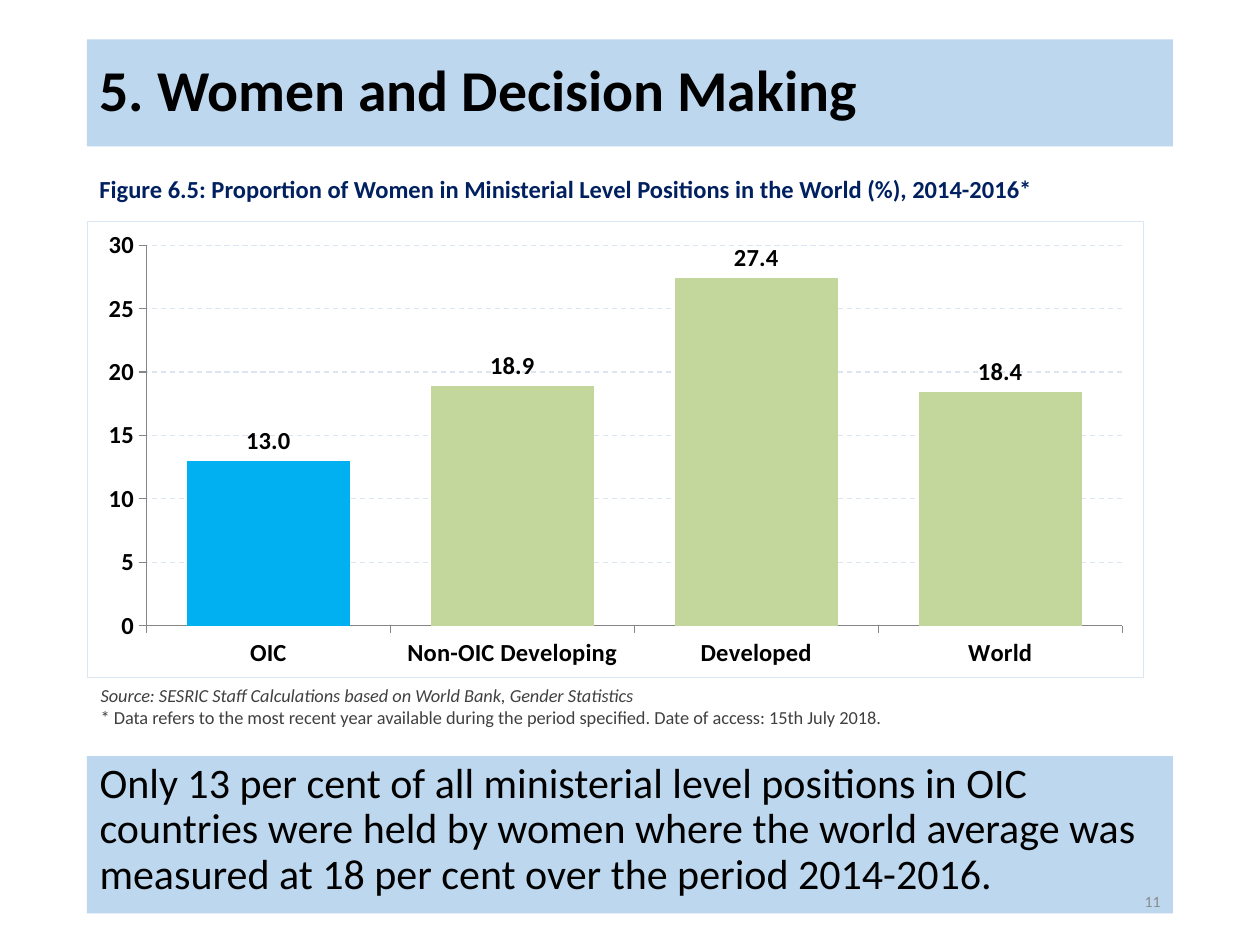
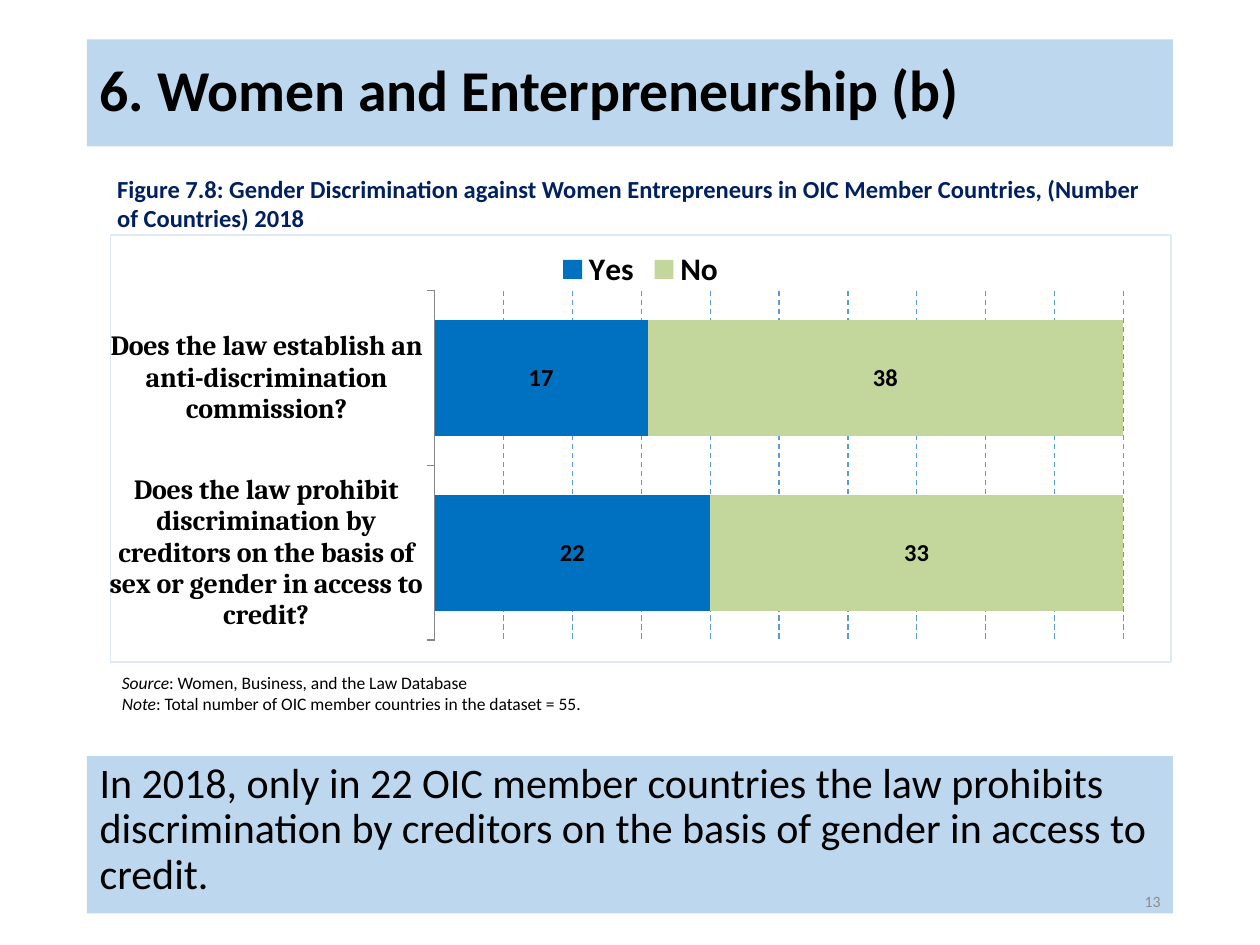
from lxml import etree
from pptx import Presentation
from pptx.chart.data import CategoryChartData
from pptx.dml.color import RGBColor
from pptx.enum.chart import (XL_CHART_TYPE as ChartType, XL_LABEL_POSITION as LabelPos,
                             XL_LEGEND_POSITION as LegendPos, XL_TICK_LABEL_POSITION as TickLabelPos,
                             XL_TICK_MARK as TickMark)
from pptx.enum.dml import MSO_LINE
from pptx.enum.text import MSO_ANCHOR, MSO_AUTO_SIZE, PP_ALIGN
from pptx.oxml import parse_xml
from pptx.oxml.ns import nsdecls, qn
from pptx.util import Pt

BAND = RGBColor(0xBD, 0xD7, 0xEE)
BLACK = RGBColor(0, 0, 0)
NAVY = RGBColor(0x00, 0x20, 0x60)
DARK_GREY = RGBColor(0x40, 0x40, 0x40)
NUMBER_GREY = RGBColor(0x8C, 0x8C, 0x8C)
AXIS_GREY = RGBColor(0x86, 0x86, 0x86)
PALE_BLUE = RGBColor(0xDC, 0xE6, 0xF2)
GRID_BLUE = RGBColor(0x5B, 0x9B, 0xD5)
GREEN = RGBColor(0xC3, 0xD6, 0x9B)
OIC_BLUE = RGBColor(0x00, 0xB0, 0xF0)
YES_BLUE = RGBColor(0x00, 0x70, 0xC0)
FONT = "Calibri"

TITLE_BOX = (49.7, 22.5, 620.6, 61.2)
MESSAGE_BOX = (49.7, 432, 620.6, 90)
NUMBER_BOX = (508.3, 500.4, 162, 28.8)

PAGES = [
    dict(
        title="5. Women and Decision Making",
        message="Only 13 per cent of all ministerial level positions in OIC countries were held by women "
                "where the world average was measured at 18 per cent over the period 2014-2016.",
        number="11",
        caption="Figure 6.5: Proportion of Women in Ministerial Level Positions in the World (%), 2014-2016*",
        caption_box=(49.7, 95.8, 603.4, 48.2),
        notes=[[("Source: SESRIC Staff Calculations based on World Bank, Gender Statistics", True)],
               [("* Data refers to the most recent year available during the period specified. "
                 "Date of access: 15th July 2018.", False)]],
        notes_box=(50.4, 387.4, 603.4, 32.4), notes_size=10.5, notes_color=DARK_GREY,
        chart_type=ChartType.COLUMN_CLUSTERED, chart_box=(49.7, 126, 604, 261.4),
        border="DCE6F2", grid=PALE_BLUE,
        categories=["OIC", "Non-OIC Developing", "Developed", "World"],
        series=[("Series 1", (13, 18.9, 27.4, 18.4), GREEN, "0.0", LabelPos.OUTSIDE_END)],
    ),
    dict(
        title="6. Women and Enterpreneurship (b)",
        message="In 2018, only in 22 OIC member countries the law prohibits discrimination by creditors "
                "on the basis of gender in access to credit.",
        number="13",
        caption="Figure 7.8: Gender Discrimination against Women Entrepreneurs in OIC Member Countries, "
                "(Number of Countries) 2018",
        caption_box=(59.8, 95.8, 608.4, 33.1),
        notes=[[("Source", True), (": Women, Business, and the Law Database", False)],
               [("Note", True), (": Total number of OIC member countries in the dataset = 55.", False)]],
        notes_box=(62.6, 380.2, 607.7, 31), notes_size=10, notes_color=BLACK,
        chart_type=ChartType.BAR_STACKED_100, chart_box=(62.6, 133.9, 607, 244.8),
        border="DEEBF7", grid=GRID_BLUE,
        categories=["Does the law establish an anti-discrimination commission?",
                    "Does the law prohibit discrimination by creditors on the basis of sex or gender "
                    "in access to credit?"],
        series=[("Yes", (17, 22), YES_BLUE, "#,##0", LabelPos.CENTER),
                ("No", (38, 33), GREEN, "0", LabelPos.CENTER)],
    ),
]


def fill_band(band, box, text, size, bold, anchor):
    """Place a title or body placeholder as a blue band with one plain paragraph."""
    band.left, band.top, band.width, band.height = map(Pt, box)
    band.fill.solid()
    band.fill.fore_color.rgb = BAND
    frame = band.text_frame
    frame.text = text
    frame.word_wrap = True
    frame.auto_size = MSO_AUTO_SIZE.NONE
    frame.vertical_anchor = anchor
    paragraph = frame.paragraphs[0]
    paragraph.alignment = PP_ALIGN.LEFT
    paragraph.line_spacing = 0.9
    paragraph.font.name, paragraph.font.size, paragraph.font.bold = FONT, Pt(size), bold
    paragraph.font.color.rgb = BLACK
    return paragraph


def add_text(slide, box, paragraphs, size, color, bold=False, align=PP_ALIGN.LEFT, anchor=MSO_ANCHOR.TOP):
    """Add a text box; each paragraph is a list of (text, italic) runs."""
    frame = slide.shapes.add_textbox(*map(Pt, box)).text_frame
    frame.word_wrap = True
    frame.vertical_anchor = anchor
    for index, runs in enumerate(paragraphs):
        paragraph = frame.add_paragraph() if index else frame.paragraphs[0]
        paragraph.alignment = align
        paragraph.font.name, paragraph.font.size, paragraph.font.bold = FONT, Pt(size), bold
        paragraph.font.color.rgb = color
        for text, italic in runs:
            run = paragraph.add_run()
            run.text = text
            run.font.italic = italic


prs = Presentation()
prs.slide_width, prs.slide_height = Pt(720), Pt(540)
charts = []

for page in PAGES:
    slide = prs.slides.add_slide(prs.slide_layouts[1])
    fill_band(slide.shapes.title, TITLE_BOX, page["title"], 33, True, MSO_ANCHOR.MIDDLE)
    message = fill_band(slide.placeholders[1], MESSAGE_BOX, page["message"], 24, False, MSO_ANCHOR.TOP)
    message.space_before = Pt(7.5)
    unbulleted = message._p.get_or_add_pPr()
    unbulleted.set("marL", "0")
    unbulleted.set("indent", "0")
    unbulleted.insert_element_before(parse_xml(f"<a:buNone {nsdecls('a')}/>"),
                                     "a:tabLst", "a:defRPr", "a:extLst")

    data = CategoryChartData()
    data.categories = page["categories"]
    for name, values, *_ in page["series"]:
        data.add_series(name, values)
    chart = slide.shapes.add_chart(page["chart_type"], *map(Pt, page["chart_box"]), data).chart
    charts.append(chart)
    chart.has_title = False
    chart.has_legend = False
    chart.font.name, chart.font.size, chart.font.bold = FONT, Pt(14), True
    chart.font.color.rgb = BLACK

    plot = chart.plots[0]
    plot.gap_width = 50
    plot.vary_by_categories = False
    for series, (_, _, color, number_format, position) in zip(plot.series, page["series"]):
        series.format.fill.solid()
        series.format.fill.fore_color.rgb = color
        series.invert_if_negative = False
        labels = series.data_labels
        labels.show_value = True
        labels.number_format, labels.number_format_is_linked = number_format, False
        labels.position = position

    for axis in (chart.category_axis, chart.value_axis):
        axis.major_tick_mark, axis.minor_tick_mark = TickMark.OUTSIDE, TickMark.NONE
        axis.format.line.color.rgb = AXIS_GREY
        axis.format.line.width = Pt(0.75)
    chart.value_axis.has_major_gridlines = True
    grid_line = chart.value_axis.major_gridlines.format.line
    grid_line.color.rgb = page["grid"]
    grid_line.width = Pt(0.75)
    grid_line.dash_style = MSO_LINE.DASH

    white = '<a:solidFill><a:srgbClr val="FFFFFF"/></a:solidFill>'
    chart_space = chart._chartSpace
    chart_space.find(qn("c:chart")).addnext(parse_xml(
        f'<c:spPr {nsdecls("c", "a")}>{white}<a:ln w="9525"><a:solidFill>'
        f'<a:srgbClr val="{page["border"]}"/></a:solidFill></a:ln></c:spPr>'))
    chart_space.find(".//" + qn("c:plotArea")).append(parse_xml(
        f'<c:spPr {nsdecls("c", "a")}>{white}<a:ln><a:noFill/></a:ln></c:spPr>'))

    add_text(slide, page["caption_box"], [[(page["caption"], False)]], 14, NAVY, bold=True)
    add_text(slide, page["notes_box"], page["notes"], page["notes_size"], page["notes_color"])
    add_text(slide, NUMBER_BOX, [[(page["number"], False)]], 9, NUMBER_GREY,
             align=PP_ALIGN.RIGHT, anchor=MSO_ANCHOR.MIDDLE)

ministers, discrimination = charts

# Ministers: the OIC column stands out against the comparison groups
oic_fill = ministers.plots[0].series[0].points[0].format.fill
oic_fill.solid()
oic_fill.fore_color.rgb = OIC_BLUE
ministers.category_axis.tick_label_position = TickLabelPos.LOW
share_axis = ministers.value_axis
share_axis.minimum_scale, share_axis.maximum_scale, share_axis.major_unit = 0, 30, 5
share_axis.tick_labels.number_format = "General"
share_axis.tick_labels.number_format_is_linked = False

# Discrimination: questions read from the top, answers add up to the full width
discrimination.plots[0].overlap = 100
discrimination.value_axis.visible = False
questions = discrimination.category_axis
questions.reverse_order = True
question_font = questions.tick_labels.font
question_font.name, question_font.size, question_font.bold = "Cambria", Pt(16), True
question_font.color.rgb = BLACK
discrimination.has_legend = True
discrimination.legend.position = LegendPos.TOP
discrimination.legend.include_in_layout = False
discrimination.legend.font.size = Pt(18)

plot_area = discrimination._chartSpace.find(".//" + qn("c:plotArea"))
for automatic_layout in plot_area.findall(qn("c:layout")):
    plot_area.remove(automatic_layout)
layout = etree.Element(qn("c:layout"))
manual_layout = etree.SubElement(layout, qn("c:manualLayout"))
for tag, value in [("layoutTarget", "inner"), ("xMode", "edge"), ("yMode", "edge"),
                   ("x", "0.306"), ("y", "0.131"), ("w", "0.649"), ("h", "0.818")]:
    etree.SubElement(manual_layout, qn("c:" + tag)).set("val", value)
plot_area.insert(0, layout)

prs.save("out.pptx")
